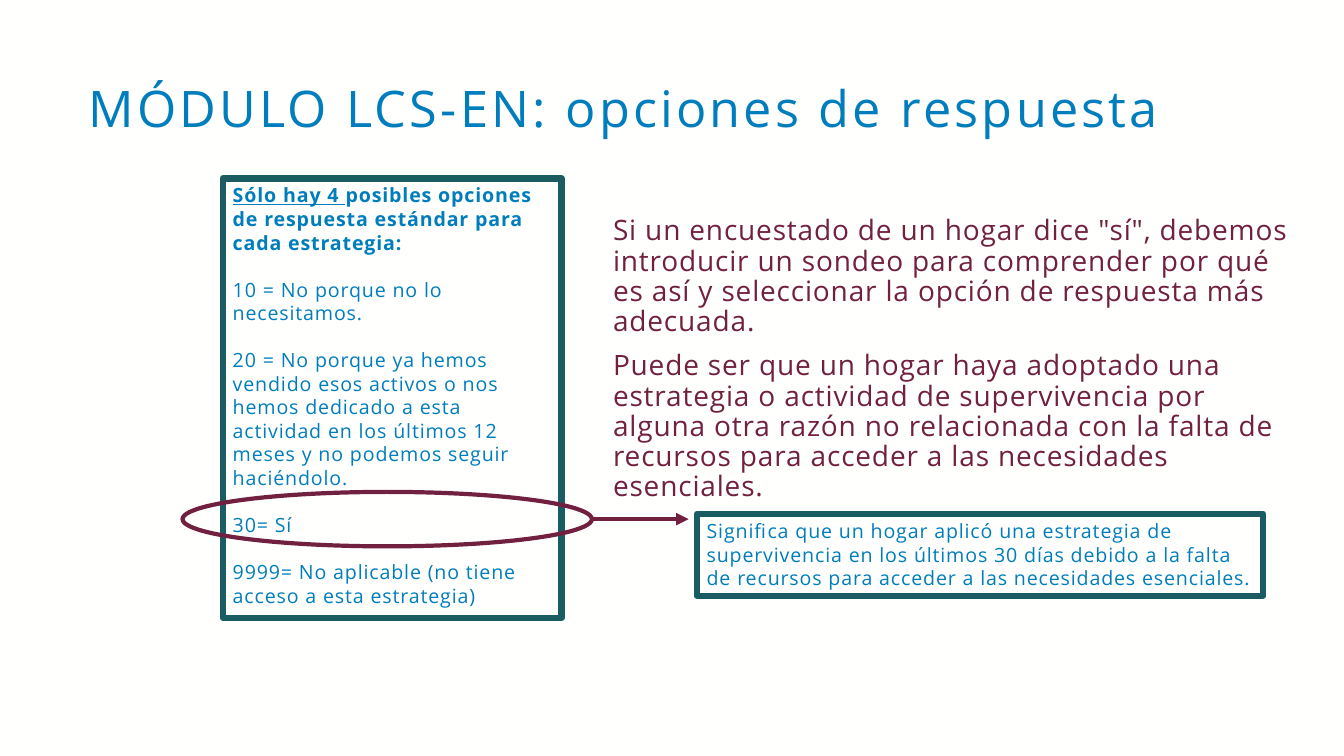
from dataclasses import dataclass

from lxml.etree import SubElement
from pptx import Presentation
from pptx.dml.color import RGBColor as Rgb
from pptx.enum.shapes import MSO_CONNECTOR as Link, MSO_SHAPE as Preset
from pptx.enum.text import MSO_ANCHOR as Anchor, MSO_AUTO_SIZE as Fit, PP_ALIGN as Align
from pptx.oxml.ns import qn
from pptx.util import Inches, Pt


@dataclass(frozen=True)
class Theme:
    font: str = "Open Sans"
    paper: str = "FFFFFE"
    blue: str = "007DBC"
    teal: str = "1B5B62"
    wine: str = "722040"
    title_size: int = 36
    body_size: int = 20
    box_size: int = 14
    title_tracking: int = 230
    text_tracking: int = 60
    frame_width: float = 4.5
    mark_width: float = 3


class SlideBuilder:
    """Draws themed elements on one slide, placed by percentages of its size."""

    def __init__(self, deck, theme):
        self.deck, self.theme = deck, theme
        self.slide = deck.slides.add_slide(deck.slide_layouts[1])
        background = self.slide.background.fill
        background.solid()
        background.fore_color.rgb = Rgb.from_string(theme.paper)

    def place(self, *shares):
        sides = (self.deck.slide_width, self.deck.slide_height) * 2
        return [round(side * share / 100) for side, share in zip(sides, shares)]

    def set_text(self, shape, paragraphs, size, color, tracking, gap=0, leading=None, fit=Fit.SHAPE_TO_FIT_TEXT):
        frame = shape.text_frame
        frame.word_wrap, frame.auto_size = True, fit
        frame.vertical_anchor = Anchor.TOP
        frame.text = "\n".join(paragraphs)
        for index, paragraph in enumerate(frame.paragraphs):
            paragraph.alignment = Align.LEFT
            paragraph.line_spacing = leading
            paragraph.space_before = Pt(gap if index else 0)
            properties = paragraph._p.get_or_add_pPr()
            properties.set("marL", "0")
            properties.set("indent", "0")
            SubElement(properties, qn("a:buNone"))
            font = paragraph.font
            font.name, font.size = self.theme.font, Pt(size)
            font.color.rgb = Rgb.from_string(color)
            properties.find(qn("a:defRPr")).set("spc", str(tracking))
        return frame

    def stroke(self, line, color, width):
        line.color.rgb = Rgb.from_string(color)
        line.width = Pt(width)

    def outline(self, preset, area, color, width):
        shape = self.slide.shapes.add_shape(preset, *self.place(*area))
        shape.shadow.inherit = False
        shape.fill.background()
        self.stroke(shape.line, color, width)
        return shape

    def title(self, area, text):
        heading = self.slide.shapes.title
        heading.left, heading.top, heading.width, heading.height = self.place(*area)
        self.set_text(heading, [text], self.theme.title_size, self.theme.blue,
                      self.theme.title_tracking, leading=0.9, fit=Fit.NONE)

    def body(self, area, paragraphs):
        guidance = self.slide.placeholders[1]
        guidance.left, guidance.top, guidance.width, guidance.height = self.place(*area)
        self.set_text(guidance, paragraphs, self.theme.body_size, self.theme.wine,
                      self.theme.text_tracking, gap=10, leading=0.9)

    def box(self, area, paragraphs, gap=0):
        frame = self.outline(Preset.RECTANGLE, area, self.theme.teal, self.theme.frame_width)
        return self.set_text(frame, paragraphs, self.theme.box_size, self.theme.blue,
                             self.theme.text_tracking, gap=gap)

    def ring(self, area):
        self.outline(Preset.OVAL, area, self.theme.wine, self.theme.mark_width)

    def arrow(self, start, end):
        arrow = self.slide.shapes.add_connector(Link.STRAIGHT, *self.place(*start, *end))
        self.stroke(arrow.line, self.theme.wine, self.theme.mark_width)
        SubElement(arrow.line._get_or_add_ln(), qn("a:tailEnd"), type="triangle")
        SubElement(arrow._element.spPr, qn("a:effectLst"))


def main():
    deck = Presentation()
    deck.slide_width, deck.slide_height = Inches(13.33), Inches(7.5)
    page = SlideBuilder(deck, Theme())

    page.title((5.85, 10.4, 90.7, 9.6), "MÓDULO LCS-EN: opciones de respuesta")

    options = page.box((16.58, 23.6, 25.21, 58.13), [
        "Sólo hay 4 ",
        "10 = No porque no lo necesitamos.",
        "20 = No porque ya hemos vendido esos activos o nos hemos dedicado a esta "
        "actividad en los últimos 12 meses y no podemos seguir haciéndolo.",
        "30= Sí",
        "9999= No aplicable (no tiene acceso a esta estrategia)",
    ], gap=16.8)
    lead = options.paragraphs[0]
    lead.font.bold = True
    lead.runs[0].font.underline = True
    lead.add_run().text = "posibles opciones de respuesta estándar para cada estrategia:"

    page.box((51.84, 68, 42.16, 10.8), [
        "Significa que un hogar aplicó una estrategia de supervivencia en los últimos 30 días "
        "debido a la falta de recursos para acceder a las necesidades esenciales.",
    ])
    page.arrow((44.04, 68.67), (51.24, 68.67))
    page.ring((13.58, 65.07, 30.46, 7.2))

    page.body((44.86, 28, 52.89, 31.47), [
        'Si un encuestado de un hogar dice "sí", debemos introducir un sondeo para comprender '
        "por qué es así y seleccionar la opción de respuesta más adecuada.",
        "Puede ser que un hogar haya adoptado una estrategia o actividad de supervivencia por "
        "alguna otra razón no relacionada con la falta de recursos para acceder a las "
        "necesidades esenciales.",
    ])
    deck.save("out.pptx")


if __name__ == "__main__":
    main()
